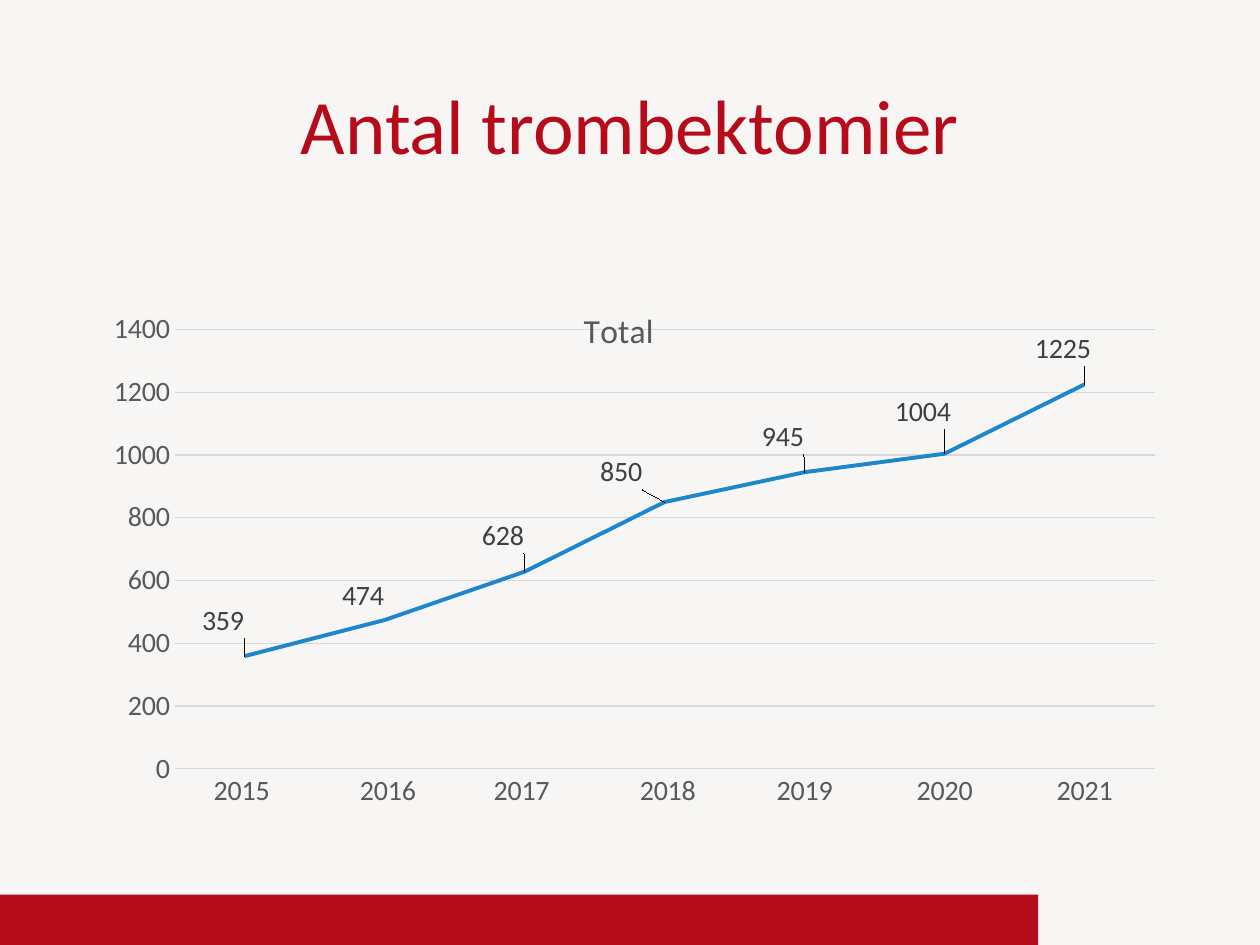
from dataclasses import dataclass

import pptx
import pptx.chart.data
import pptx.dml.color
import pptx.enum.chart
import pptx.enum.shapes
import pptx.enum.text
import pptx.oxml
import pptx.oxml.ns
import pptx.util

Inches, Pt = pptx.util.Inches, pptx.util.Pt
FONT = "Calibri"
RED, BLUE, GRAY, DARK, GRID = "B50B1B", "1D86CD", "595959", "404040", "D9D9D9"


@dataclass
class YearCount:
    year: str
    count: int
    dx: float  # label offset from its point, as a fraction of the chart
    dy: float


COUNTS = [
    YearCount("2015 ", 359, -0.02, -0.06),
    YearCount(" 2016", 474, -0.02, -0.04),
    YearCount("2017 ", 628, -0.02, -0.06),
    YearCount(" 2018", 850, -0.04, -0.05),
    YearCount("2019", 945, -0.02, -0.06),
    YearCount("2020", 1004, -0.02, -0.07),
    YearCount("2021", 1225, -0.02, -0.06),
]


def rgb(color: str) -> pptx.dml.color.RGBColor:
    return pptx.dml.color.RGBColor.from_string(color)


def set_font(font, size: float, color: str) -> None:
    font.name, font.size, font.bold = FONT, Pt(size), False
    font.color.rgb = rgb(color)


def set_line(line, color: str, width: float) -> None:
    line.color.rgb = rgb(color)
    line.width = Pt(width)


def make_layout(**values):
    """Return a c:layout element with the given manual settings, in schema order."""
    settings = "".join(f'<c:{k} val="{v}"/>' for k, v in values.items())
    return pptx.oxml.parse_xml(
        f'<c:layout {pptx.oxml.ns.nsdecls("c")}>'
        f"<c:manualLayout>{settings}</c:manualLayout></c:layout>")


def replace_layout(parent, after: str, **values) -> None:
    """Put a manual layout behind the named child, or first if there is none."""
    for old in parent.findall(pptx.oxml.ns.qn("c:layout")):
        parent.remove(old)
    child = parent.find(pptx.oxml.ns.qn(after))
    index = 0 if child is None else parent.index(child) + 1
    parent.insert(index, make_layout(**values))


def format_axes(chart) -> None:
    for axis in (chart.category_axis, chart.value_axis):
        axis.major_tick_mark = pptx.enum.chart.XL_TICK_MARK.NONE
        axis.minor_tick_mark = pptx.enum.chart.XL_TICK_MARK.NONE
        set_font(axis.tick_labels.font, 16, GRAY)
    set_line(chart.category_axis.format.line, GRID, 0.75)
    axis = chart.value_axis
    axis.minimum_scale, axis.maximum_scale, axis.major_unit = 0, 1400, 200
    axis.format.line.fill.background()
    axis.has_major_gridlines = True
    set_line(axis.major_gridlines.format.line, GRID, 0.75)
    axis.tick_labels.number_format = "0"
    axis.tick_labels.number_format_is_linked = False


def format_series(series) -> None:
    series.smooth = False
    set_line(series.format.line, BLUE, 2.25)
    series.marker.style = pptx.enum.chart.XL_MARKER_STYLE.NONE
    labels = series.data_labels
    labels.show_value = True
    labels.number_format, labels.number_format_is_linked = "0", False
    labels.position = pptx.enum.chart.XL_LABEL_POSITION.CENTER
    set_font(labels.font, 16, DARK)
    for i, item in enumerate(COUNTS):
        label = series.points[i].data_label
        label.position = pptx.enum.chart.XL_LABEL_POSITION.CENTER
        set_font(label.font, 16, DARK)
    for element, item in zip(series.data_labels._element.findall(
            pptx.oxml.ns.qn("c:dLbl")), COUNTS):
        replace_layout(element, "c:idx", x=item.dx, y=item.dy)


def add_count_chart(slide) -> None:
    data = pptx.chart.data.CategoryChartData(number_format="0")
    data.categories = [item.year for item in COUNTS]
    data.add_series("Total ", [item.count for item in COUNTS])
    chart = slide.shapes.add_chart(
        pptx.enum.chart.XL_CHART_TYPE.LINE, Inches(0.61), Inches(2.15),
        Inches(8.64), Inches(4.65), data).chart
    set_font(chart.font, 16, "000000")
    chart.has_legend = False
    chart.has_title = True
    p = chart.chart_title.text_frame.paragraphs[0]
    p.text = "Total "
    set_font(p.font, 19.2, GRAY)
    replace_layout(chart.chart_title._element, "c:tx",
                   xMode="edge", yMode="edge", x=0.46, y=0.05)
    chart.plots[0].vary_by_categories = False
    format_axes(chart)
    format_series(chart.plots[0].series[0])
    plot_area = chart._chartSpace.chart.plotArea
    replace_layout(plot_area, "c:none", layoutTarget="inner",
                   xMode="edge", yMode="edge", x=0.09, y=0.1, w=0.9, h=0.75)


def main() -> None:
    prs = pptx.Presentation()
    prs.slide_width, prs.slide_height = Inches(10), Inches(7.5)
    slide = prs.slides.add_slide(prs.slide_layouts[5])
    slide.background.fill.solid()
    slide.background.fill.fore_color.rgb = rgb("F7F6F5")

    bar = slide.shapes.add_shape(
        pptx.enum.shapes.MSO_SHAPE.RECTANGLE, 0, Inches(7.1), Inches(8.24), Inches(0.4))
    bar.shadow.inherit = False
    bar.fill.solid()
    bar.fill.fore_color.rgb = rgb(RED)
    bar.line.fill.background()

    title = slide.shapes.title
    title.left, title.top = Inches(0.75), Inches(0.18)
    title.width, title.height = Inches(8.5), Inches(1.61)
    tf = title.text_frame
    tf.vertical_anchor = pptx.enum.text.MSO_ANCHOR.MIDDLE
    p = tf.paragraphs[0]
    p.text = "Antal trombektomier"
    p.alignment = pptx.enum.text.PP_ALIGN.CENTER
    set_font(p.font, 44, RED)

    add_count_chart(slide)
    prs.save("out.pptx")


if __name__ == "__main__":
    main()
